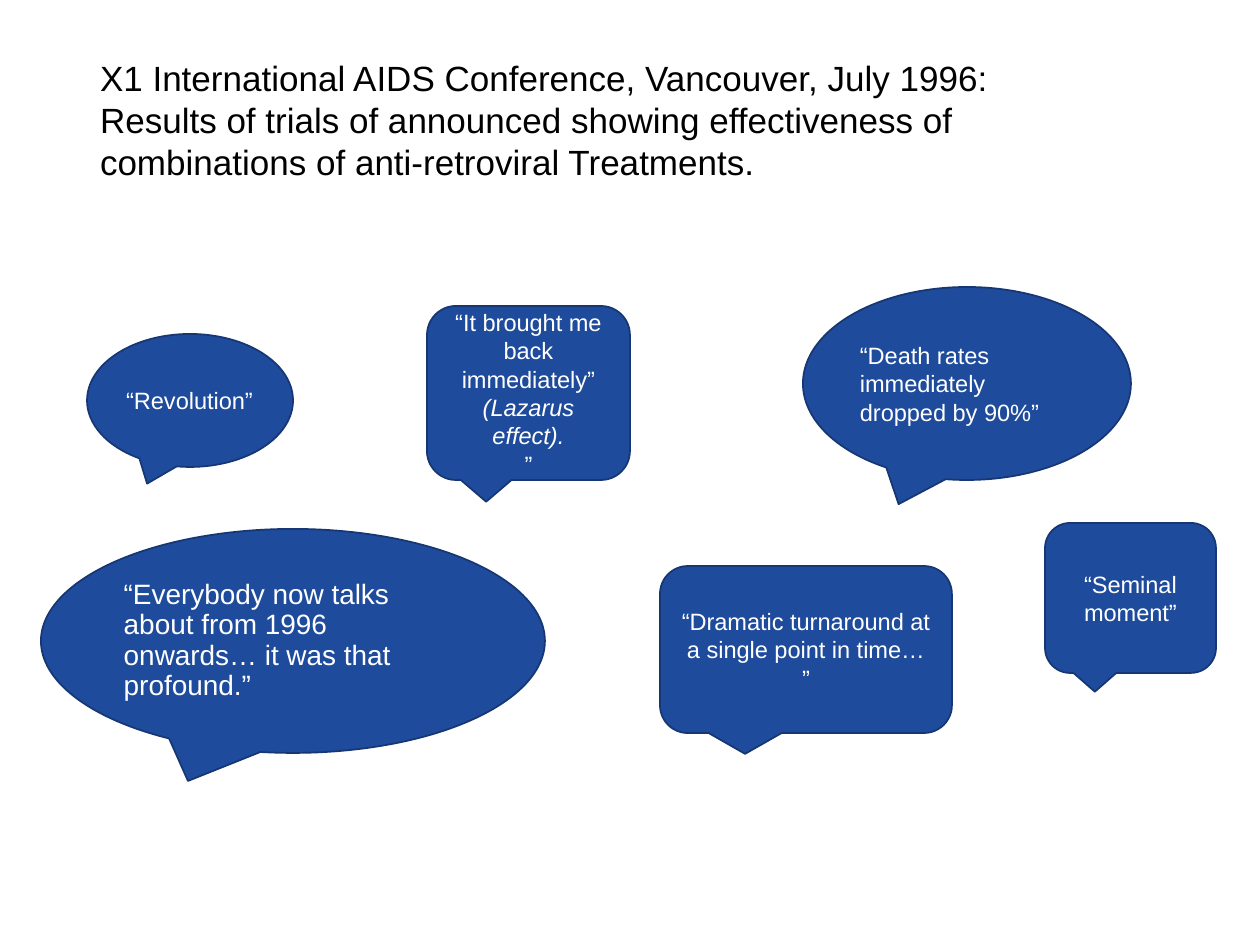
from pptx import Presentation
from pptx.dml.color import RGBColor
from pptx.enum.shapes import MSO_SHAPE
from pptx.enum.text import MSO_ANCHOR, MSO_AUTO_SIZE, PP_ALIGN
from pptx.oxml.ns import qn
from pptx.util import Pt
from lxml import etree

ELLIPSE = MSO_SHAPE.OVAL_CALLOUT
ROUNDED = MSO_SHAPE.ROUNDED_RECTANGULAR_CALLOUT
LEFT, CENTER = PP_ALIGN.LEFT, PP_ALIGN.CENTER
TOP, MIDDLE = MSO_ANCHOR.TOP, MSO_ANCHOR.MIDDLE
NO_FIT = MSO_AUTO_SIZE.NONE

EMU_PER_PX = 914400 / 126
COLORS = {"text": "000000", "fill": "1E4B9B", "line": "163773", "quote": "FFFFFF"}


def px(n):
    return round(n * EMU_PER_PX)


def rgb(name):
    return RGBColor.from_string(COLORS[name])


class Deck:
    font = "Arial"

    def __init__(self, width, height):
        self.prs = Presentation()
        self.prs.slide_width, self.prs.slide_height = px(width), px(height)
        self.s = self.prs.slides.add_slide(self.prs.slide_layouts[1])

    def place(self, sp, box):
        sp.left, sp.top, sp.width, sp.height = map(px, box)

    def frame(self, sp, anchor, inset_x, inset_y):
        tf = sp.text_frame
        tf.word_wrap, tf.auto_size, tf.vertical_anchor = True, NO_FIT, anchor
        tf.margin_left = tf.margin_right = px(inset_x)
        tf.margin_top = tf.margin_bottom = px(inset_y)
        return tf

    def run(self, p, text, size, color, italic=False):
        r = p.add_run()
        r.text = text
        r.font.name, r.font.size, r.font.italic = self.font, Pt(size), italic
        r.font.color.rgb = rgb(color)

    def title(self, box, lines, size):
        sp = self.s.shapes.title
        self.place(sp, box)
        p = self.frame(sp, TOP, 13, 6).paragraphs[0]
        p.alignment = LEFT
        for i, line in enumerate(lines):
            if i:
                p.add_line_break()
            self.run(p, line, size, "text")

    def style(self, sp):
        sp.fill.solid()
        sp.fill.fore_color.rgb = rgb("fill")
        sp.line.color.rgb = rgb("line")
        sp.line.width = Pt(1)

    def callout(self, kind, box, paragraphs, align=LEFT, size=13.5):
        sp = self.s.shapes.add_shape(kind, *map(px, box))
        sp.shadow.inherit = False
        self.style(sp)
        tf = self.frame(sp, MIDDLE, 9, 5)
        for i, (text, italic) in enumerate(paragraphs):
            p = tf.add_paragraph() if i else tf.paragraphs[0]
            p.alignment = align
            self.run(p, text, size, "quote", italic)

    def body_callout(self, box, text, size):
        sp = self.s.placeholders[1]
        self.place(sp, box)
        # Give the body placeholder a speech bubble outline
        geom = etree.SubElement(sp._element.spPr, qn("a:prstGeom"), prst="wedgeEllipseCallout")
        etree.SubElement(geom, qn("a:avLst"))
        self.style(sp)
        p = self.frame(sp, MIDDLE, 9, 5).paragraphs[0]
        pPr = p._p.get_or_add_pPr()
        pPr.set("marL", "0")
        pPr.set("indent", "0")
        etree.SubElement(pPr, qn("a:buNone"))
        p.alignment, p.line_spacing, p.space_before = LEFT, 0.9, Pt(0)
        self.run(p, text, size, "quote")


def main():
    d = Deck(1260, 945)

    # Title
    d.title((87, 50, 1086, 183), [
        "X1 International AIDS Conference, Vancouver, July 1996: ",
        "Results of trials of announced showing effectiveness of "
        "combinations of anti-retroviral Treatments."], 20)

    # Main quote
    d.body_callout((41, 529, 504, 224),
                   "“Everybody now talks about from 1996 onwards… it was that profound.”", 16)

    # Oval quotes
    d.callout(ELLIPSE, (803, 287, 328, 193),
              [("“Death rates immediately dropped by 90%”", False)])
    d.callout(ELLIPSE, (87, 334, 206, 133), [("“Revolution”", False)])

    # Rounded quotes
    d.callout(ROUNDED, (1045, 523, 171, 150), [("“Seminal moment”", False)], CENTER)
    d.callout(ROUNDED, (427, 306, 203, 174),
              [("“It brought me back immediately”", False),
               ("(Lazarus effect).", True), ("”", False)], CENTER)
    d.callout(ROUNDED, (660, 566, 292, 167),
              [("“Dramatic turnaround at a single point in time…", False),
               ("”", False)], CENTER)

    d.prs.save("out.pptx")


if __name__ == "__main__":
    main()
